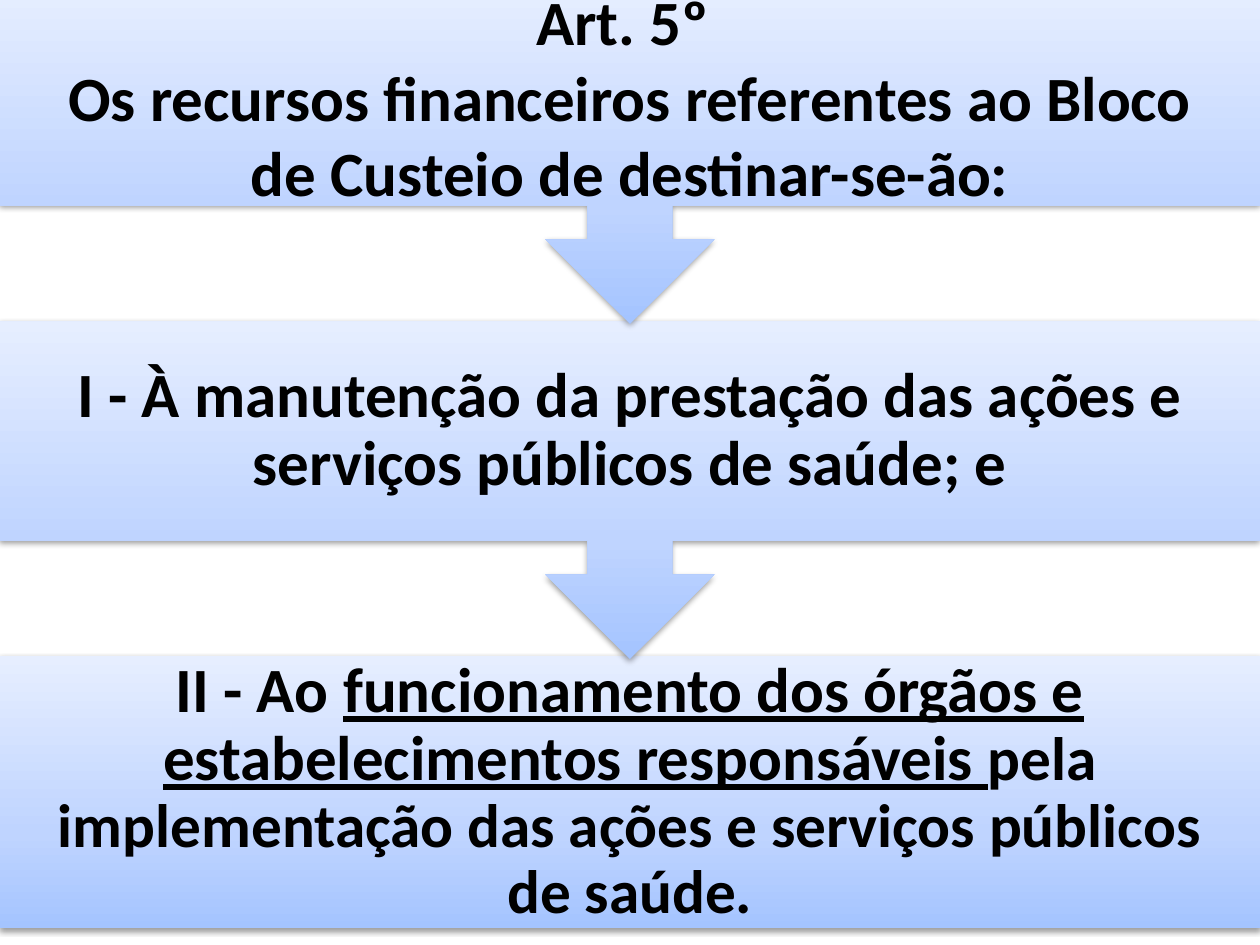
"""Build a slide showing how Art. 5º directs the funding block, as three stacked steps."""
from copy import deepcopy

from lxml import etree
from pptx import Presentation
from pptx.dml.color import RGBColor
from pptx.enum.shapes import MSO_SHAPE
from pptx.enum.text import MSO_ANCHOR, PP_ALIGN
from pptx.oxml.ns import qn
from pptx.util import Inches, Pt

RECTANGLE = MSO_SHAPE.RECTANGLE
CALLOUT = MSO_SHAPE.DOWN_ARROW_CALLOUT
MIDDLE = MSO_ANCHOR.MIDDLE
CENTER = PP_ALIGN.CENTER

THEME = {
    "font": "Calibri",
    "size": 36,
    "closing_size": 35,
    "text": RGBColor(0, 0, 0),
    "gradient": [(0, "A4C4FF"), (0.35, "BFD4FF"), (1, "E6EEFF")],
    "shadow": "000000",
}

deck = Presentation()
deck.slide_width, deck.slide_height = Inches(10), Inches(7.5)
slide = deck.slides.add_slide(deck.slide_layouts[6])

first_top = Inches(-0.11)
step_pitch = Inches(2.66)
callout_height = Inches(2.68)
closing_height = Inches(2.16)
padding = Inches(0.28)


def paint(step):
    step.line.fill.background()
    step.fill.gradient()
    step.fill.gradient_angle = 90
    stop_list = step._element.spPr.find(qn("a:gradFill")).find(qn("a:gsLst"))
    stop_list.insert(1, deepcopy(stop_list[0]))
    for stop, (position, color) in zip(step.fill.gradient_stops, THEME["gradient"]):
        stop.position = position
        stop.color.rgb = RGBColor.from_string(color)
    step.shadow.inherit = False
    effects = step._element.spPr.find(qn("a:effectLst"))
    shadow = etree.SubElement(
        effects, qn("a:outerShdw"), blurRad=str(Pt(3.1)), dist=str(Pt(1.6)),
        dir="5400000", rotWithShape="0")
    shade = etree.SubElement(shadow, qn("a:srgbClr"), val=THEME["shadow"])
    etree.SubElement(shade, qn("a:alpha"), val="38000")


size, closing_size = THEME["size"], THEME["closing_size"]
steps = [
    (CALLOUT, callout_height, 1, [
        [("Art. 5º ", size, False)],
        [("Os recursos financeiros referentes ao Bloco de Custeio de destinar-se-ão:",
          size, False)],
    ]),
    (CALLOUT, callout_height, 0.9, [
        [("I - À manutenção da prestação das ações e serviços públicos de saúde; e",
          size, False)],
    ]),
    (RECTANGLE, closing_height, 0.9, [
        [("II - Ao ", size, False),
         ("funcionamento dos órgãos e estabelecimentos responsáveis ", size, True),
         ("pela implementação das ações e serviços públicos de saúde.",
          closing_size, False)],
    ]),
]

for order, (outline, height, spacing, paragraphs) in reversed(list(enumerate(steps))):
    step = slide.shapes.add_shape(
        outline, 0, first_top + order * step_pitch, deck.slide_width, height)
    paint(step)
    frame = step.text_frame
    frame.word_wrap = True
    frame.vertical_anchor = MIDDLE
    frame.margin_left = frame.margin_right = padding
    frame.margin_top = frame.margin_bottom = padding
    for index, wording in enumerate(paragraphs):
        paragraph = frame.add_paragraph() if index else frame.paragraphs[0]
        paragraph.alignment = CENTER
        paragraph.line_spacing = spacing
        for words, points, underlined in wording:
            run = paragraph.add_run()
            run.text = words
            run.font.name = THEME["font"]
            run.font.size = Pt(points)
            run.font.bold = True
            run.font.underline = underlined
            run.font.color.rgb = THEME["text"]

deck.save("out.pptx")
